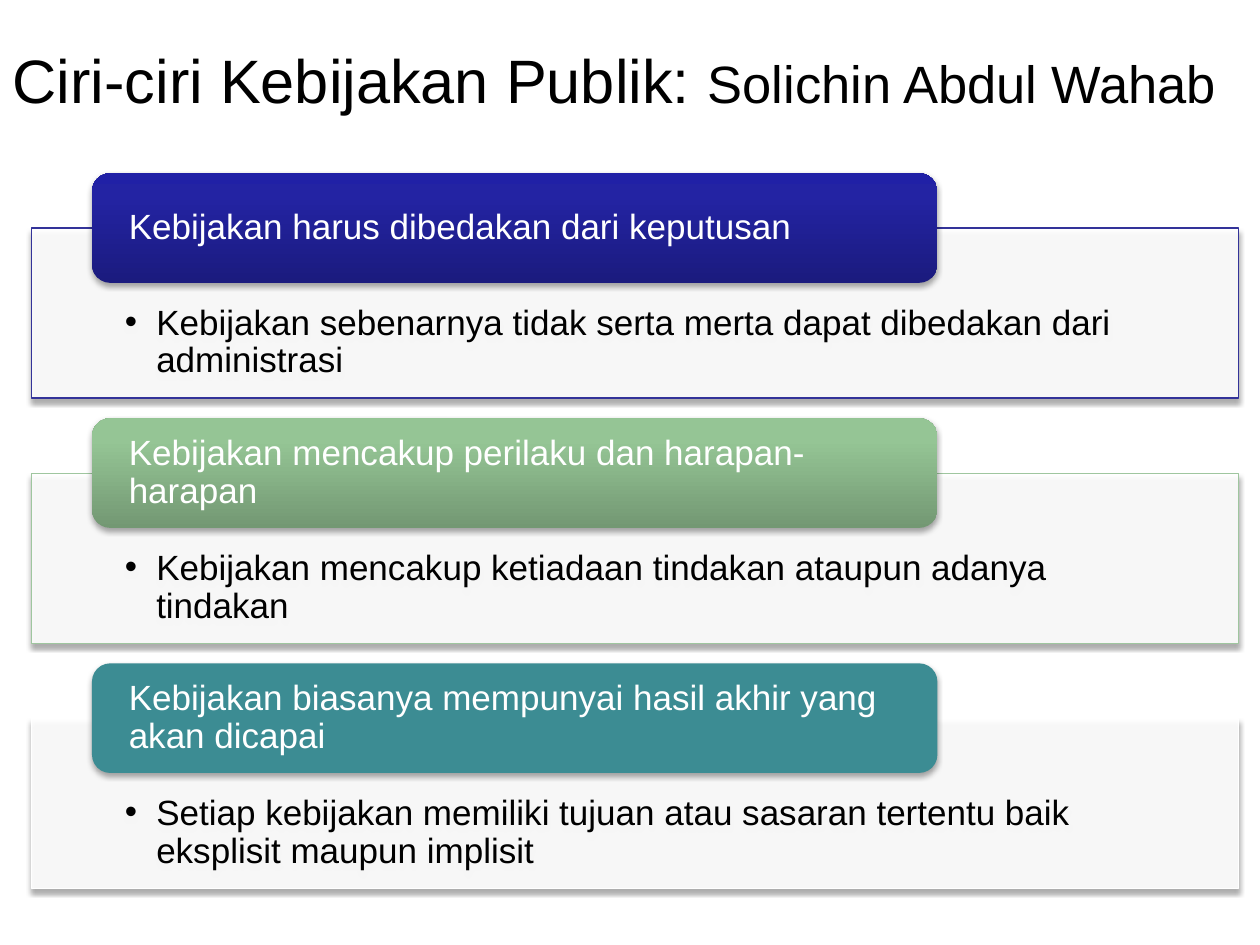
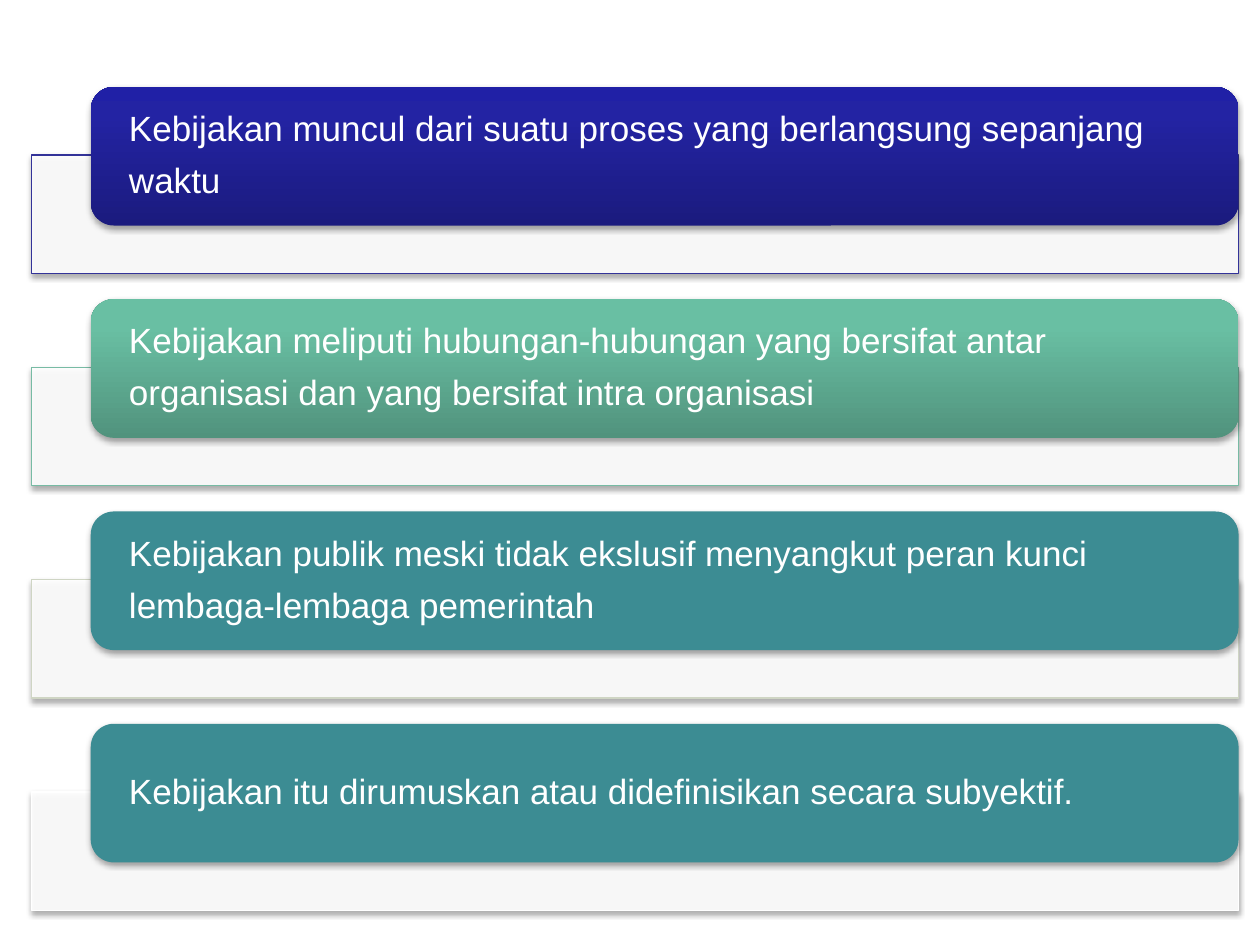
from dataclasses import dataclass

from lxml.etree import SubElement
from pptx import Presentation
from pptx.dml.color import RGBColor
from pptx.enum.shapes import MSO_SHAPE
from pptx.enum.text import MSO_ANCHOR, PP_ALIGN
from pptx.oxml.ns import qn
from pptx.util import Pt

PX = 4572
FONT = "Arial"
BODY_SIZE = 20
MARGIN = 50
PANEL_WIDTH = 1916
BULLET_INDENT = 50

COLORS = {
    "text": "000000",
    "white": "FFFFFF",
    "navy": "333399",
    "navy_dark": "1B1B7E",
    "navy_mid": "2323A3",
    "navy_light": "2020A6",
    "sage": "9FC69F",
    "sage_dark": "739873",
    "sage_mid": "95C595",
    "sage_light": "95C795",
    "mint": "77BBA4",
    "mint_dark": "51937D",
    "mint_mid": "69BFA3",
    "mint_light": "68C2A4",
    "sand": "CFD5C4",
    "teal": "3C8C93",
}


@dataclass(frozen=True)
class Item:
    heading: str
    outline: str
    fills: tuple[str, ...]
    detail: str = ""


@dataclass(frozen=True)
class Stack:
    top: int
    pitch: int
    panel_height: int
    tab_left: int
    tab_rise: int
    tab_width: int
    tab_height: int
    items: tuple[Item, ...]


NAVY = ("navy_dark", "navy_mid", "navy_light")
SAGE = ("sage_dark", "sage_mid", "sage_light")
MINT = ("mint_dark", "mint_mid", "mint_light")
TEAL = ("teal",)

DETAILED = Stack(362, 389, 270, 146, 87, 1342, 174, (
    Item("Kebijakan harus dibedakan dari keputusan", "navy", NAVY,
         "Kebijakan sebenarnya tidak serta merta dapat dibedakan dari administrasi"),
    Item("Kebijakan mencakup perilaku dan harapan-harapan", "sage", SAGE,
         "Kebijakan mencakup ketiadaan tindakan ataupun adanya tindakan"),
    Item("Kebijakan biasanya mempunyai hasil akhir yang akan dicapai", "white", TEAL,
         "Setiap kebijakan memiliki tujuan atau sasaran tertentu baik eksplisit maupun implisit"),
))

HEADINGS = Stack(246, 337, 188, 144, 108, 1822, 220, (
    Item("Kebijakan muncul dari suatu proses yang berlangsung sepanjang\nwaktu", "navy", NAVY),
    Item("Kebijakan meliputi hubungan-hubungan yang bersifat antar\n"
         "organisasi dan yang bersifat intra organisasi", "mint", MINT),
    Item("Kebijakan publik meski tidak ekslusif menyangkut peran kunci\n"
         "lembaga-lembaga pemerintah", "sand", TEAL),
    Item("Kebijakan itu dirumuskan atau didefinisikan secara subyektif.", "white", TEAL),
))


def rgb(name: str) -> RGBColor:
    return RGBColor.from_string(COLORS[name])


def format_run(r, size: int, color: str) -> None:
    r.font.name = FONT
    r.font.size = Pt(size)
    r.font.color.rgb = rgb(color)


def add_color(parent, color: str, alpha: int | None = None) -> None:
    clr = SubElement(parent, qn("a:srgbClr"), val=COLORS[color])
    if alpha is not None:
        SubElement(clr, qn("a:alpha"), val=str(alpha * 1000))


def add_box(slide, kind: MSO_SHAPE, left: int, top: int, width: int, height: int):
    sp = slide.shapes.add_shape(kind, left * PX, top * PX, width * PX, height * PX)
    sp.shadow.inherit = False
    effects = sp._element.spPr.find(qn("a:effectLst"))
    shadow = SubElement(effects, qn("a:outerShdw"), blurRad=str(Pt(3.1)),
                        dist=str(Pt(1.8)), dir="5400000", rotWithShape="0")
    add_color(shadow, "text", 35)
    return sp


def fill_box(sp, fills: tuple[str, ...]) -> None:
    if len(fills) == 1:
        sp.fill.solid()
        sp.fill.fore_color.rgb = rgb(fills[0])
        return
    sp.fill.gradient()
    sp.fill.gradient_angle = 90
    stops = sp._element.spPr.find(qn("a:gradFill")).find(qn("a:gsLst"))
    for gs in list(stops):
        stops.remove(gs)
    for position, color in zip((0, 80, 100), fills):
        add_color(SubElement(stops, qn("a:gs"), pos=str(position * 1000)), color)


def write_text(sp, text: str, color: str, insets: tuple[int, int, int, int],
               anchor: MSO_ANCHOR, space_after: int) -> None:
    tf = sp.text_frame
    tf.word_wrap = True
    tf.vertical_anchor = anchor
    tf.margin_left, tf.margin_top, tf.margin_right, tf.margin_bottom = (
        inset * PX for inset in insets)
    tf.text = text
    for p in tf.paragraphs:
        p.alignment = PP_ALIGN.LEFT
        p.line_spacing = 0.9
        p.space_after = Pt(space_after)
        for r in p.runs:
            format_run(r, BODY_SIZE, color)


def add_bullet(p) -> None:
    pPr = p._p.get_or_add_pPr()
    pPr.set("marL", str(BULLET_INDENT * PX))
    pPr.set("indent", str(-BULLET_INDENT * PX))
    SubElement(pPr, qn("a:buFont"), typeface=FONT)
    SubElement(pPr, qn("a:buChar"), char="•")


def add_panel(slide, stack: Stack, item: Item, top: int) -> None:
    sp = add_box(slide, MSO_SHAPE.RECTANGLE, MARGIN, top, PANEL_WIDTH, stack.panel_height)
    fill_box(sp, ("white",))
    fill = sp._element.spPr.find(qn("a:solidFill"))
    SubElement(fill[0], qn("a:alpha"), val="90000")
    sp.line.color.rgb = rgb(item.outline)
    sp.line.width = Pt(0.75)
    if item.detail:
        write_text(sp, item.detail, "text", (148, 122, 148, 32), MSO_ANCHOR.TOP, 3)
        add_bullet(sp.text_frame.paragraphs[0])


def add_tab(slide, stack: Stack, item: Item, top: int) -> None:
    sp = add_box(slide, MSO_SHAPE.ROUNDED_RECTANGLE, stack.tab_left,
                 top - stack.tab_rise, stack.tab_width, stack.tab_height)
    fill_box(sp, item.fills)
    sp.line.fill.background()
    write_text(sp, item.heading, "white", (50, 0, 50, 0), MSO_ANCHOR.MIDDLE, 8)


def add_stack(slide, stack: Stack) -> None:
    for i, item in enumerate(stack.items):
        top = stack.top + i * stack.pitch
        add_panel(slide, stack, item, top)
        add_tab(slide, stack, item, top)


def set_title(slide, main: str, author: str) -> None:
    title = slide.shapes.title
    title.left, title.top, title.width, title.height = 0, 0, 2000 * PX, 250 * PX
    tf = title.text_frame
    tf.word_wrap = True
    tf.vertical_anchor = MSO_ANCHOR.MIDDLE
    p = tf.paragraphs[0]
    p.alignment = PP_ALIGN.LEFT
    for text, size in ((main, 35), (author, 30)):
        r = p.add_run()
        r.text = text
        format_run(r, size, "text")


def main() -> None:
    prs = Presentation()
    prs.slide_width, prs.slide_height = 2000 * PX, 1500 * PX
    title_only, blank = prs.slide_layouts[5], prs.slide_layouts[6]

    slide = prs.slides.add_slide(title_only)
    set_title(slide, "Ciri-ciri Kebijakan Publik: ", "Solichin Abdul Wahab")
    add_stack(slide, DETAILED)

    add_stack(prs.slides.add_slide(blank), HEADINGS)
    prs.save("out.pptx")


if __name__ == "__main__":
    main()
